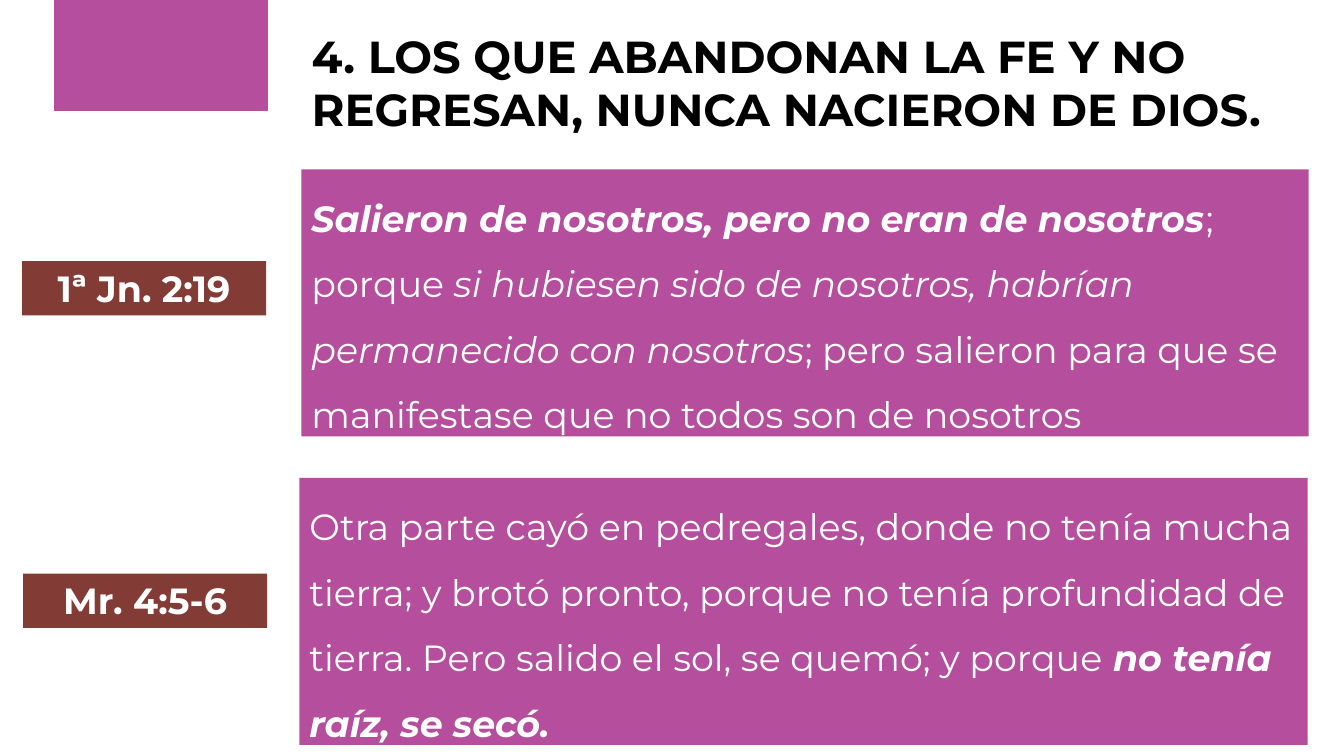
from pptx import Presentation
from pptx.dml.color import RGBColor
from pptx.enum import shapes, text
from pptx import util as u

PX = 9144  # 100 px to the inch
PURPLE = RGBColor(0xB5, 0x4E, 0x9D)
BROWN = RGBColor(0x82, 0x3B, 0x35)
WHITE = RGBColor(0xFF, 0xFF, 0xFF)
BLACK = RGBColor(0, 0, 0)


def add_box(left, top, width, height, fill):
    sp = s.shapes.add_shape(shapes.MSO_SHAPE.RECTANGLE,
                            left * PX, top * PX, width * PX, height * PX)
    sp.shadow.inherit = False
    sp.fill.solid()
    sp.fill.fore_color.rgb = fill
    sp.line.fill.background()
    return sp


def write(sp, runs, size, color, align, spacing=1.0):
    tf = sp.text_frame
    tf.word_wrap = True
    tf.auto_size = text.MSO_AUTO_SIZE.NONE
    tf.vertical_anchor = text.MSO_ANCHOR.TOP
    p = tf.paragraphs[0]
    p.alignment = align
    p.line_spacing = spacing
    for words, bold, italic in runs:
        r = p.add_run()
        r.text = words
        r.font.name = "Montserrat"
        r.font.size = u.Pt(size)
        r.font.bold = bold
        r.font.italic = italic
        r.font.color.rgb = color


prs = Presentation()
prs.slide_width, prs.slide_height = 1333 * PX, 750 * PX
s = prs.slides.add_slide(prs.slide_layouts[5])

# Corner block
corner = add_box(54, 0, 211, 110, PURPLE)
corner.line.color.rgb = PURPLE
corner.line.width = u.Pt(1)

# Verses: label place, passage place, passage runs (words, bold, italic)
verses = [
    ("Mr. 4:5-6", (23, 569), (297, 474, 1000), [
        ("Otra parte cayó en pedregales, donde no tenía mucha tierra; y brotó "
         "pronto, porque no tenía profundidad de tierra. Pero salido el sol, "
         "se quemó; y porque ", False, False),
        ("no tenía raíz, se secó.", True, True)]),
    ("1ª Jn. 2:19", (22, 259), (299, 168, 999), [
        ("Salieron de nosotros, pero no eran de nosotros", True, True),
        ("; porque ", False, False),
        ("si hubiesen sido de nosotros, habrían permanecido con nosotros",
         False, True),
        ("; pero salieron para que se manifestase que no todos son de nosotros",
         False, False)]),
]
for reference, label_at, passage_at, runs in verses:
    label = add_box(*label_at, 242, 54, BROWN)
    write(label, [(reference, True, False)], 26, WHITE, text.PP_ALIGN.CENTER)
    passage = add_box(*passage_at, 265, PURPLE)
    write(passage, runs, 26, WHITE, text.PP_ALIGN.LEFT, 1.5)

# Title
title = s.shapes.title
title.left, title.top, title.width, title.height = (
    299 * PX, 23 * PX, 999 * PX, 118 * PX)
write(title, [("4. LOS QUE ABANDONAN LA FE Y NO REGRESAN, NUNCA NACIERON DE DIOS.",
               True, False)], 32, BLACK, text.PP_ALIGN.LEFT)

prs.save("out.pptx")
